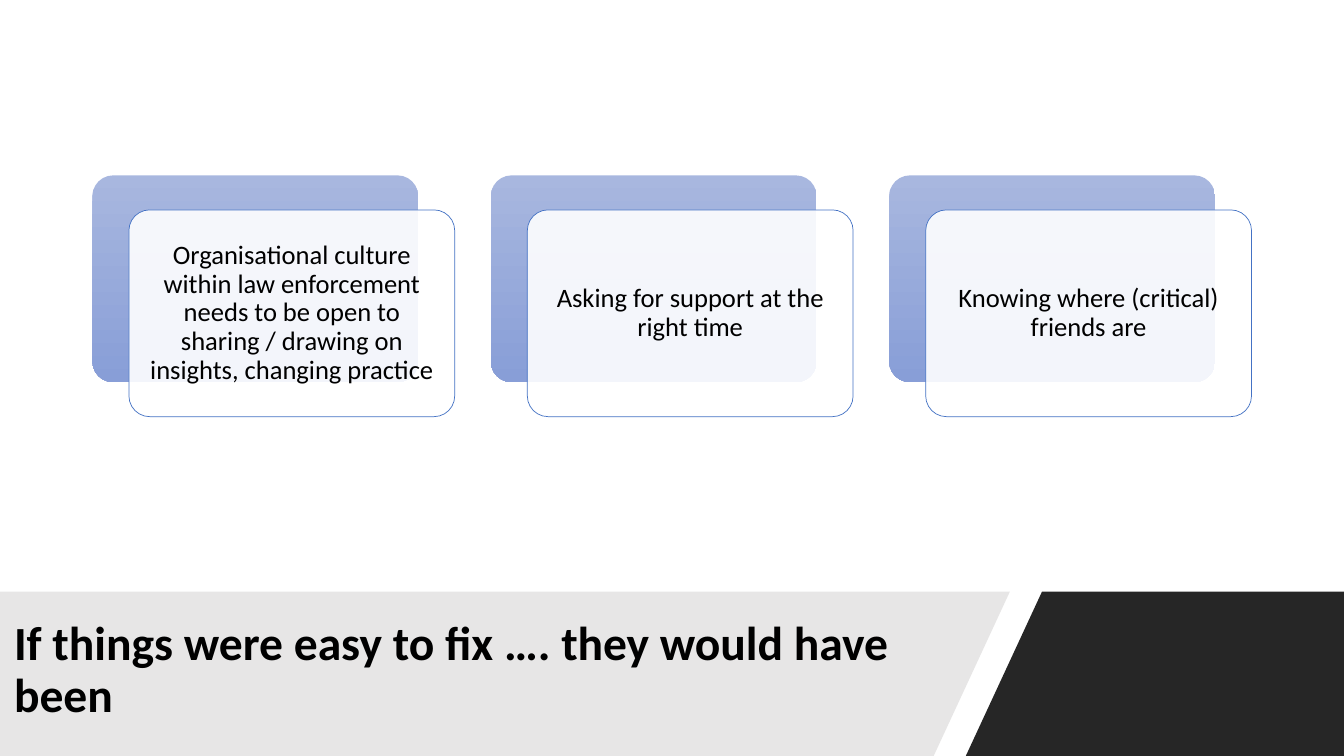
"""Builds a slide with three layered cards above a slanted title band."""
import pptx
import pptx.util
import pptx.dml.color
import pptx.enum.shapes
import pptx.enum.text
import pptx.oxml.ns
import lxml.etree

Cm, Pt = pptx.util.Cm, pptx.util.Pt
MSO = pptx.enum.text

TITLE = "If things were easy to fix …. they would have been"
CARDS = [
    "Organisational culture within law enforcement needs to be open to "
    "sharing / drawing on insights, changing practice",
    "Asking for support at the right time",
    "Knowing where (critical) friends are",
]
WIDE, HIGH, BAND = 33.87, 19.05, 14.91
BANDS = [
    ("262626", [(26.26, BAND), (WIDE, BAND), (WIDE, HIGH), (24.34, HIGH)]),
    ("E7E6E6", [(0, BAND), (25.45, BAND), (23.53, HIGH), (0, HIGH)]),
]
LEFT, TOP, STEP = 2.33, 4.42, 10.04
CARD_W, CARD_H = 8.21, 5.21
SHIFT_X, SHIFT_Y = 0.92, 0.87


def color(code):
    return pptx.dml.color.RGBColor.from_string(code)


def add_band(slide, code, points):
    corners = [(Cm(x), Cm(y)) for x, y in points]
    form = slide.shapes.build_freeform(*corners[0])
    form.add_line_segments(corners[1:], close=True)
    band = form.convert_to_shape()
    band.shadow.inherit = False
    band.fill.solid()
    band.fill.fore_color.rgb = color(code)
    band.line.fill.background()


def add_card(slide, x, y):
    kind = pptx.enum.shapes.MSO_SHAPE.ROUNDED_RECTANGLE
    card = slide.shapes.add_shape(kind, Cm(x), Cm(y), Cm(CARD_W), Cm(CARD_H))
    card.adjustments[0] = 0.1
    card.shadow.inherit = False
    return card


def set_text(shape, text, size, align):
    frame = shape.text_frame
    frame.text = text
    frame.word_wrap = True
    frame.auto_size = MSO.MSO_AUTO_SIZE.NONE
    frame.vertical_anchor = MSO.MSO_ANCHOR.MIDDLE
    para = frame.paragraphs[0]
    para.alignment = align
    para.line_spacing = 0.9
    para.font.name = "Calibri"
    para.font.size = Pt(size)
    para.font.color.rgb = color("000000")
    return frame


def add_back(slide, x):
    back = add_card(slide, x, TOP)
    back.fill.gradient()
    back.fill.gradient_angle = 270
    for stop, code in zip(back.fill.gradient_stops, ("A8B7DF", "889ED7")):
        stop.color.rgb = color(code)
    back.line.fill.background()


def add_front(slide, x, text):
    front = add_card(slide, x + SHIFT_X, TOP + SHIFT_Y)
    front.fill.solid()
    front.fill.fore_color.rgb = color("FFFFFF")
    tint = front._element.spPr.find(".//" + pptx.oxml.ns.qn("a:srgbClr"))
    lxml.etree.SubElement(tint, pptx.oxml.ns.qn("a:alpha"), val="90000")
    front.line.color.rgb = color("4472C4")
    front.line.width = Pt(0.5)
    frame = set_text(front, text, 19, MSO.PP_ALIGN.CENTER)
    frame.margin_left = frame.margin_right = Cm(0.2)
    frame.margin_top = frame.margin_bottom = Cm(0.2)


def main():
    deck = pptx.Presentation()
    deck.slide_width, deck.slide_height = Cm(WIDE), Cm(HIGH)
    slide = deck.slides.add_slide(deck.slide_layouts[5])
    for code, points in BANDS:
        add_band(slide, code, points)

    title = slide.shapes.title
    slide.shapes._spTree.append(title._element)
    title.left, title.top = Cm(0.1), Cm(15.39)
    title.width, title.height = Cm(24.77), Cm(3.05)
    frame = set_text(title, TITLE, 34, MSO.PP_ALIGN.LEFT)
    frame.paragraphs[0].font.bold = True

    for i, text in enumerate(CARDS):
        x = LEFT + i * STEP
        add_back(slide, x)
        add_front(slide, x, text)
    deck.save("out.pptx")


if __name__ == "__main__":
    main()
